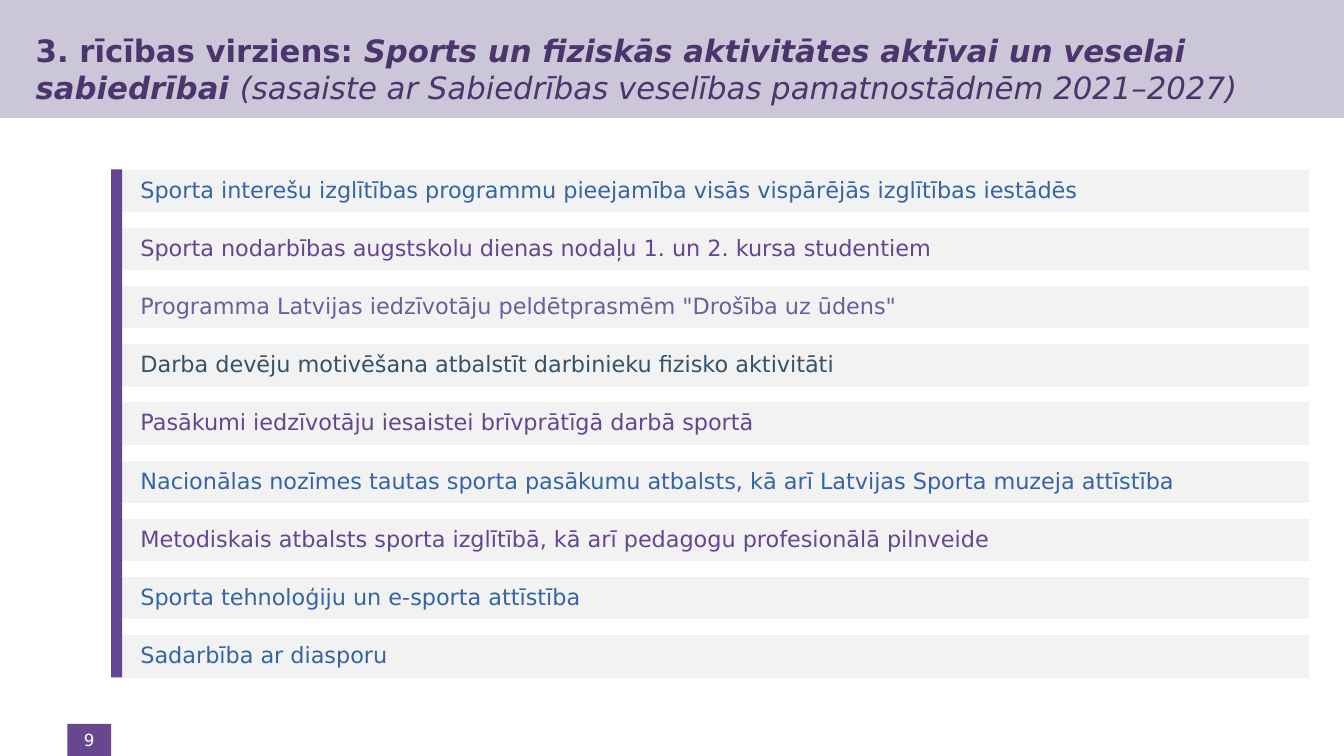
from pptx import Presentation
from pptx.dml.color import RGBColor
from pptx.enum.shapes import MSO_SHAPE
from pptx.enum.text import MSO_ANCHOR, PP_ALIGN
from pptx.util import Cm, Pt

RECTANGLE = MSO_SHAPE.RECTANGLE
MIDDLE = MSO_ANCHOR.MIDDLE
LEFT, CENTER = PP_ALIGN.LEFT, PP_ALIGN.CENTER

WHITE = RGBColor(0xFF, 0xFF, 0xFF)
LAVENDER = RGBColor(0xCB, 0xC7, 0xD8)
LIGHT_GREY = RGBColor(0xF2, 0xF2, 0xF2)
DARK_PURPLE = RGBColor(0x4C, 0x34, 0x6C)
BADGE_PURPLE = RGBColor(0x66, 0x47, 0x90)
PURPLE = RGBColor(0x66, 0x46, 0x90)
VIOLET = RGBColor(0x6B, 0x5E, 0x9B)
BLUE = RGBColor(0x34, 0x65, 0xA4)
SLATE = RGBColor(0x35, 0x52, 0x69)

HEADING = [
    ("3. rīcības virziens: ", {"bold": True}),
    ("Sports un fiziskās aktivitātes aktīvai un veselai sabiedrībai ",
     {"bold": True, "italic": True}),
    ("(sasaiste ar Sabiedrības veselības pamatnostādnēm 2021–2027)", {"italic": True}),
]

MEASURES = [
    ("Sporta interešu izglītības programmu pieejamība visās vispārējās izglītības iestādēs", BLUE),
    ("Sporta nodarbības augstskolu dienas nodaļu 1. un 2. kursa studentiem", PURPLE),
    ('Programma Latvijas iedzīvotāju peldētprasmēm "Drošība uz ūdens"', VIOLET),
    ("Darba devēju motivēšana atbalstīt darbinieku fizisko aktivitāti", SLATE),
    ("Pasākumi iedzīvotāju iesaistei brīvprātīgā darbā sportā", PURPLE),
    ("Nacionālas nozīmes tautas sporta pasākumu atbalsts, kā arī Latvijas Sporta muzeja attīstība",
     BLUE),
    ("Metodiskais atbalsts sporta izglītībā, kā arī pedagogu profesionālā pilnveide", PURPLE),
    ("Sporta tehnoloģiju un e-sporta attīstība", BLUE),
    ("Sadarbība ar diasporu", BLUE),
]

FIRST_TOP, LAST_TOP = 4.24, 15.97
PITCH = (LAST_TOP - FIRST_TOP) / (len(MEASURES) - 1)
BADGE_BOX = (1.7, 18.24, 1.1, 0.81)


class SlideBuilder:
    font_name = "DejaVu Sans"

    def __init__(self, slide):
        self.slide = slide

    def block(self, box, fill, outline=None):
        block = self.slide.shapes.add_shape(RECTANGLE, *map(Cm, box))
        block.shadow.inherit = False
        block.fill.solid()
        block.fill.fore_color.rgb = fill
        if outline is None:
            block.line.fill.background()
        else:
            block.line.color.rgb = outline
            block.line.width = Pt(2)
        return block

    def label(self, box):
        return self.slide.shapes.add_textbox(*map(Cm, box))

    def fill_text(self, holder, runs, size, color, insets, paragraph_format):
        frame = holder.text_frame
        frame_format = {"word_wrap": True, "vertical_anchor": MIDDLE}
        sides = ("margin_left", "margin_top", "margin_right", "margin_bottom")
        frame_format.update(zip(sides, map(Cm, insets)))
        for name, value in frame_format.items():
            setattr(frame, name, value)
        paragraph = frame.paragraphs[0]
        for name, value in paragraph_format.items():
            setattr(paragraph, name, value)
        for text, emphasis in runs:
            run = paragraph.add_run()
            run.text = text
            run.font.color.rgb = color
            font_format = {"name": self.font_name, "size": Pt(size), **emphasis}
            for name, value in font_format.items():
                setattr(run.font, name, value)

    def measure(self, top, text, color):
        row = self.block((2.8, top, 30.22, 1.14), LIGHT_GREY, WHITE)
        self.fill_text(row, [(text, {})], 16, color, (0.74, 0.15, 0.28, 0.15),
                       {"alignment": LEFT, "line_spacing": 0.9, "space_after": Pt(5.6)})


def main():
    presentation = Presentation()
    presentation.slide_width = Cm(33.87)
    presentation.slide_height = Cm(19.05)
    builder = SlideBuilder(presentation.slides.add_slide(presentation.slide_layouts[6]))

    builder.block((0, 0, 33.87, 2.98), LAVENDER)
    builder.block(BADGE_BOX, BADGE_PURPLE)
    heading = builder.label((0.9, 0.13, 32.33, 3.18))
    builder.fill_text(heading, HEADING, 22, DARK_PURPLE, (0, 0.13, 0.25, 0.13),
                      {"alignment": LEFT})

    for index, (text, color) in enumerate(MEASURES):
        builder.measure(FIRST_TOP + index * PITCH, text, color)

    page_number = builder.label(BADGE_BOX)
    builder.fill_text(page_number, [("9", {})], 12, WHITE, (0.1, 0.1, 0.1, 0.1),
                      {"alignment": CENTER})
    builder.block((2.8, 4.27, 0.28, 12.8), PURPLE)

    presentation.save("out.pptx")


if __name__ == "__main__":
    main()
